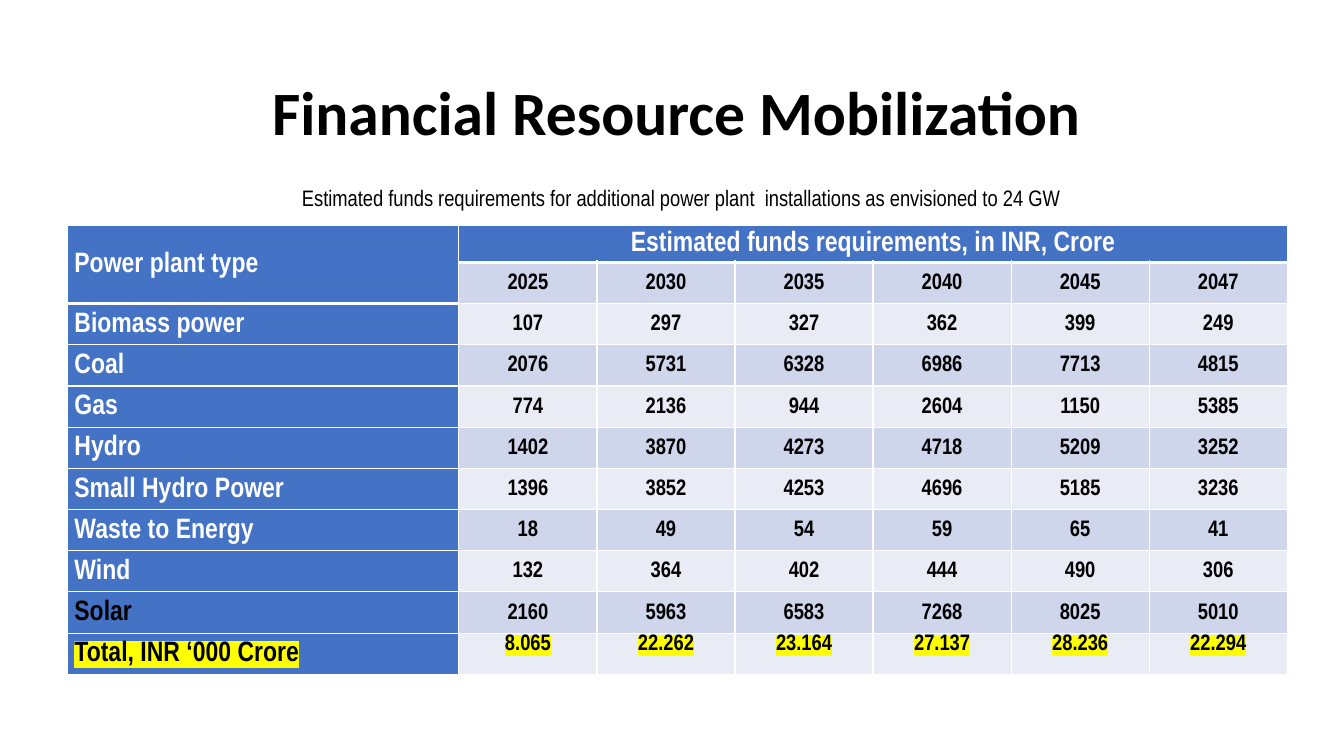
from dataclasses import dataclass

from lxml.etree import SubElement
from pptx import Presentation
from pptx.dml.color import RGBColor
from pptx.enum.text import MSO_ANCHOR, PP_ALIGN
from pptx.oxml.ns import qn
from pptx.util import Pt

TITLE = "Financial Resource Mobilization"
CAPTION = "Estimated funds requirements for additional power plant  installations as envisioned to 24 GW"
ROW_HEAD = "Power plant type"
GROUP_HEAD = "Estimated funds requirements, in INR, Crore"
YEARS = ["2025", "2030", "2035", "2040", "2045", "2047"]
PLANTS = [
    ("Biomass power", ["107", "297", "327", "362", "399", "249"]),
    ("Coal", ["2076", "5731", "6328", "6986", "7713", "4815"]),
    ("Gas", ["774", "2136", "944", "2604", "1150", "5385"]),
    ("Hydro", ["1402", "3870", "4273", "4718", "5209", "3252"]),
    ("Small Hydro Power", ["1396", "3852", "4253", "4696", "5185", "3236"]),
    ("Waste to Energy", ["18", "49", "54", "59", "65", "41"]),
    ("Wind", ["132", "364", "402", "444", "490", "306"]),
    ("Solar", ["2160", "5963", "6583", "7268", "8025", "5010"]),
    ("Total, INR ‘000 Crore", ["8.065", "22.262", "23.164", "27.137", "28.236", "22.294"]),
]
BLACK_LABELS = ("Solar", "Total, INR ‘000 Crore")


@dataclass(frozen=True)
class Theme:
    title_font: str = "Calibri"
    body_font: str = "Arial Narrow"
    title_size: int = 44
    label_size: int = 20
    value_size: int = 16
    black: str = "000000"
    white: str = "FFFFFF"
    head: str = "4472C4"
    bands: tuple = ("E9EBF5", "CFD5EA")
    marker: str = "FFFF00"


T = Theme()


def write(p, text, font, size, color, bold=False, align=PP_ALIGN.CENTER, spacing=None):
    r = p.add_run()
    r.text = text
    p.alignment = align
    p.line_spacing = spacing
    p.font.name = font
    p.font.size = Pt(size)
    p.font.bold = bold
    p.font.color.rgb = RGBColor.from_string(color)
    return r


def add_text(slide, box, anchor, *args, **kwargs):
    tf = slide.shapes.add_textbox(*map(Pt, box)).text_frame
    tf.word_wrap = True
    tf.vertical_anchor = anchor
    write(tf.paragraphs[0], *args, **kwargs)


def add_borders(cell, bottom):
    tcPr = cell._tc.get_or_add_tcPr()
    for side, width in (("L", 1), ("R", 1), ("T", 1), ("B", bottom)):
        ln = SubElement(tcPr, qn(f"a:ln{side}"), w=str(Pt(width)))
        SubElement(SubElement(ln, qn("a:solidFill")), qn("a:srgbClr"), val=T.white)


def highlight(r):
    mark = SubElement(r._r.get_or_add_rPr(), qn("a:highlight"))
    SubElement(mark, qn("a:srgbClr"), val=T.marker)


def add_funds_table(slide):
    rows = [(ROW_HEAD, [GROUP_HEAD] + [""] * (len(YEARS) - 1)), ("", YEARS)] + PLANTS
    heights = [26.6] + [29.45] * (len(rows) - 1)
    widths = [280] + [98.64] * len(YEARS)
    frame = slide.shapes.add_table(
        len(rows), len(widths), Pt(47.8), Pt(160.8), Pt(sum(widths)), Pt(sum(heights)))
    table = frame.table
    table.first_row = table.horz_banding = False
    for row, height in zip(table.rows, heights):
        row.height = Pt(height)
    for column, width in zip(table.columns, widths):
        column.width = Pt(width)
    table.cell(0, 0).merge(table.cell(1, 0))
    table.cell(0, 1).merge(table.cell(0, len(YEARS)))

    last = len(rows) - 1
    for i, (label, values) in enumerate(rows):
        for j, text in enumerate([label] + values):
            cell = table.cell(i, j)
            is_head = i == 0 or j == 0
            cell.margin_left = cell.margin_right = Pt(5.4)
            cell.margin_top = cell.margin_bottom = 0
            is_total = i == last and j > 0
            cell.vertical_anchor = MSO_ANCHOR.TOP if is_total else MSO_ANCHOR.MIDDLE
            add_borders(cell, 3 if i == 0 or (i, j) == (1, 0) else 1)
            cell.fill.solid()
            cell.fill.fore_color.rgb = RGBColor.from_string(T.head if is_head else T.bands[i % 2])
            if not text:
                continue
            r = write(
                cell.text_frame.paragraphs[0], text, T.body_font,
                T.label_size if is_head else T.value_size,
                T.white if is_head and label not in BLACK_LABELS else T.black,
                bold=True, spacing=1.07,
                align=PP_ALIGN.CENTER if j else PP_ALIGN.LEFT)
            if i == last:
                highlight(r)


def main():
    prs = Presentation()
    prs.slide_width, prs.slide_height = Pt(960), Pt(540)
    slide = prs.slides.add_slide(prs.slide_layouts[6])
    add_text(slide, (132.5, 30.2, 702, 104.4), MSO_ANCHOR.MIDDLE,
             TITLE, T.title_font, T.title_size, T.black, bold=True, spacing=0.9)
    add_funds_table(slide)
    add_text(slide, (72.7, 128.2, 828, 26.6), MSO_ANCHOR.TOP,
             CAPTION, T.body_font, T.value_size, T.black)
    prs.save("out.pptx")


if __name__ == "__main__":
    main()
